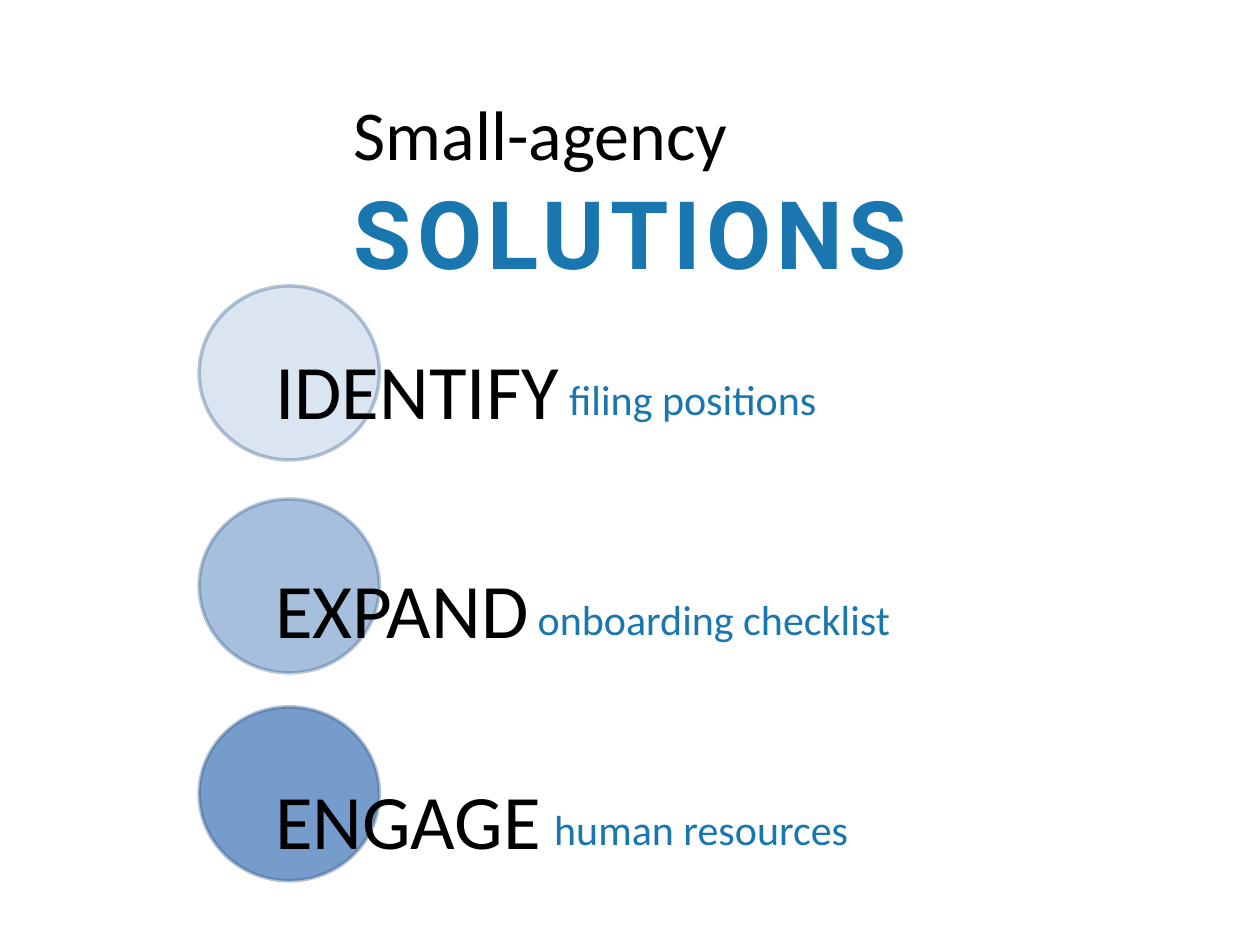
from dataclasses import dataclass

from lxml.etree import SubElement
from pptx import Presentation
from pptx.dml.color import RGBColor
from pptx.enum.shapes import MSO_SHAPE
from pptx.enum.text import MSO_AUTO_SIZE
from pptx.oxml.ns import qn
from pptx.util import Pt


@dataclass(frozen=True)
class Theme:
    black: str = "000000"
    accent: str = "1976AF"
    circle: str = "4F81BD"
    outline: str = "3A5F8C"
    body_font: str = "Calibri"
    title_font: str = "Roboto"
    lead_size: float = 40
    title_size: float = 54
    step_size: float = 44
    detail_size: float = 24


@dataclass(frozen=True)
class Run:
    text: str
    size: float
    color: str
    font: str
    bold: bool = False
    spacing: float = 0


class SlideBuilder:
    def __init__(self, slide, theme):
        self.slide = slide
        self.theme = theme

    def group(self):
        return self.slide.shapes.add_group_shape().shapes

    def text(self, shapes, left, top, width, height, runs):
        box = shapes.add_textbox(Pt(left), Pt(top), Pt(width), Pt(height))
        frame = box.text_frame
        frame.word_wrap = True
        frame.auto_size = MSO_AUTO_SIZE.SHAPE_TO_FIT_TEXT
        for part in runs:
            run = frame.paragraphs[0].add_run()
            run.text = part.text
            run.font.name = part.font
            run.font.size = Pt(part.size)
            run.font.bold = part.bold
            run.font.color.rgb = RGBColor.from_string(part.color)
            if part.spacing:
                run._r.get_or_add_rPr().set("spc", str(round(part.spacing * 100)))

    def circle(self, shapes, left, top, width, height, fill_opacity, line_opacity):
        oval = shapes.add_shape(
            MSO_SHAPE.OVAL, Pt(left), Pt(top), Pt(width), Pt(height))
        oval.shadow.inherit = False
        oval.line.width = Pt(2)
        self.paint(oval.fill, self.theme.circle)
        self.paint(oval.line.fill, self.theme.outline)
        # Document order: the fill colour comes before the line colour.
        colors = oval._element.spPr.iter(qn("a:srgbClr"))
        for color, opacity in zip(list(colors), (fill_opacity, line_opacity)):
            SubElement(color, qn("a:alpha"), val=str(opacity * 1000))

    def paint(self, fill, color):
        fill.solid()
        fill.fore_color.rgb = RGBColor.from_string(color)

    def step(self, circle_top, label_top, opacities, label, label_width,
             detail, detail_left, detail_width):
        """Group a circle with its large label and the smaller detail."""
        theme = self.theme
        shapes = self.group()
        self.circle(shapes, 113.8, circle_top, 103, 99.4, *opacities)
        self.text(shapes, 150.2, label_top, label_width, 60.5,
                  [Run(label, theme.step_size, theme.black, theme.body_font)])
        self.text(shapes, detail_left, label_top + 18, detail_width, 36,
                  [Run(detail, theme.detail_size, theme.accent, theme.body_font)])


STEPS = [
    (163.4, 192.2, (20, 37), "IDENTIFY", 255.6, "filing positions", 318.2, 162),
    (285.1, 317.5, (50, 34), "EXPAND", 203.8, "onboarding checklist", 300.2, 288),
    (403.9, 437.8, (78, 40), "ENGAGE", 203.8, "human resources", 309.6, 212.4),
]


def main():
    deck = Presentation()
    deck.slide_width, deck.slide_height = Pt(720), Pt(540)
    theme = Theme()
    slide = deck.slides.add_slide(deck.slide_layouts[6])
    builder = SlideBuilder(slide, theme)
    builder.text(slide.shapes, 195.1, 48.2, 498.2, 72.7, [
        Run("Small-agency ", theme.lead_size, theme.black, theme.body_font),
        Run("SOLUTIONS", theme.title_size, theme.accent, theme.title_font,
            bold=True, spacing=3),
    ])
    for step in STEPS:
        builder.step(*step)
    deck.save("out.pptx")


if __name__ == "__main__":
    main()
